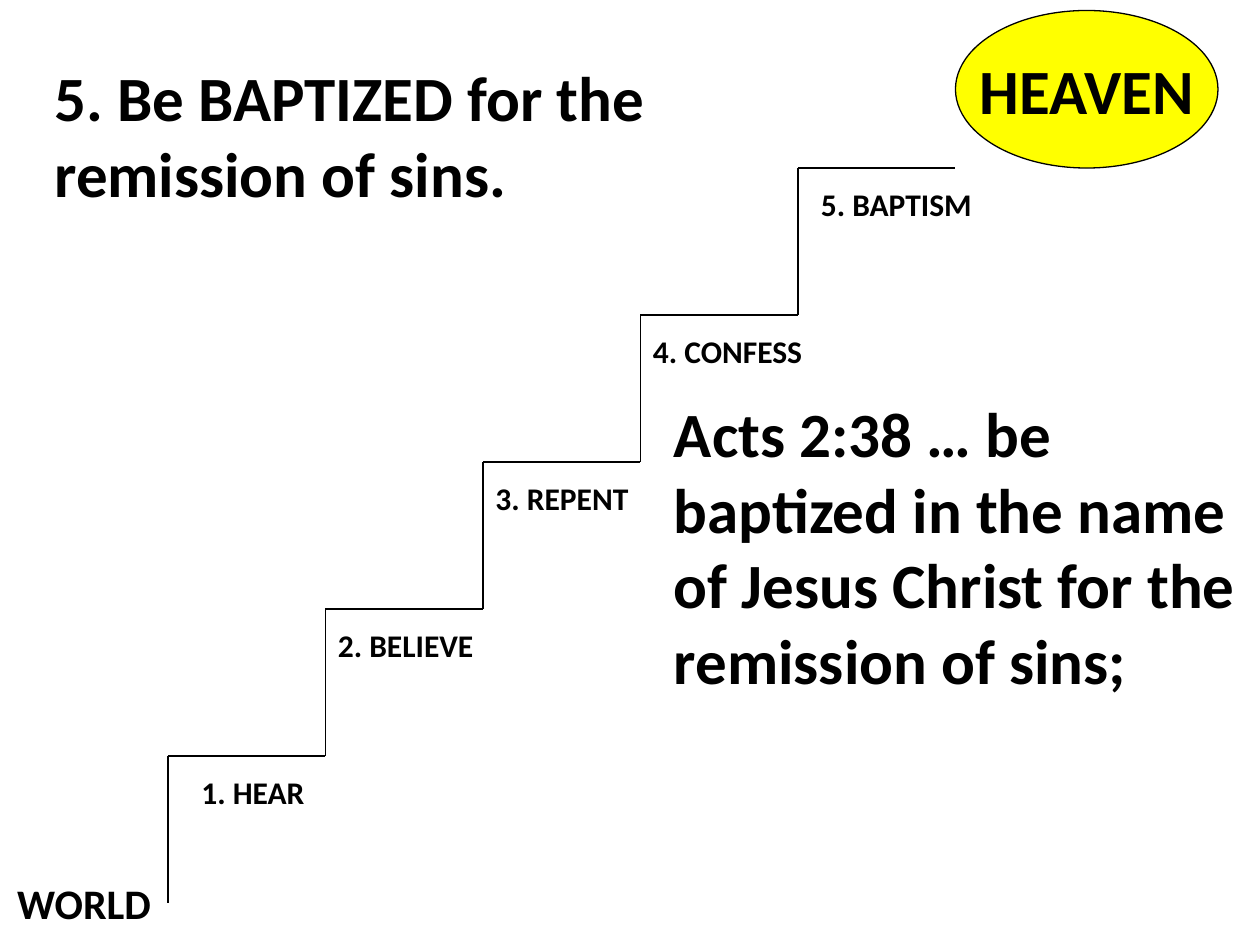
from dataclasses import dataclass
from lxml import etree
from pptx import Presentation
from pptx.dml.color import RGBColor as RGB
from pptx.enum.shapes import MSO_CONNECTOR as Link, MSO_SHAPE as Shape
from pptx.enum.text import MSO_ANCHOR as Anchor, PP_ALIGN as Align
from pptx.oxml.ns import qn
from pptx.util import Pt


@dataclass(frozen=True)
class Theme:
    ink: RGB = RGB(0, 0, 0)
    sun: RGB = RGB(255, 255, 0)
    font: str = "Calibri"
    small: int = 18
    mid: int = 24
    big: int = 36
    line: float = 0.75


theme = Theme()
deck = Presentation()
deck.slide_width, deck.slide_height = Pt(720), Pt(540)
slide = deck.slides.add_slide(deck.slide_layouts[6])
shapes = slide.shapes


def write(shape, text, size, align=Align.LEFT, wrap=True):
    frame = shape.text_frame
    frame.word_wrap = wrap
    frame.text = text
    para = frame.paragraphs[0]
    para.alignment = align
    font = para.runs[0].font
    font.name, font.size, font.bold = theme.font, Pt(size), True
    font.color.rgb = theme.ink


# Stairs: each step is a riser, then a tread
run, rise = 90, 84
steps = [
    ("1. HEAR", 108, 108),
    ("2. BELIEVE", 186, 132),
    ("3. REPENT", 276, 126),
    ("4. CONFESS", 366, 132),
    ("5. BAPTISM", 462, 132),
]
stairs = shapes.add_group_shape()
x, y = 96, 516
for label, left, width in steps:
    top = y - rise
    for ends in ((x, y, x, top), (x, top, x + run, top)):
        edge = stairs.shapes.add_connector(Link.STRAIGHT, *map(Pt, ends))
        edge.line.color.rgb = theme.ink
        edge.line.width = Pt(theme.line)
        etree.SubElement(edge._element.spPr, qn("a:effectLst"))
    box = shapes.add_textbox(Pt(left), Pt(top + 6), Pt(width), Pt(29))
    write(box, label, theme.small)
    x, y = x + run, top

# Start of the climb, heading and verse
notes = [
    ("WORLD", (0, 498, 96, 36), theme.mid, Align.CENTER),
    ("5. Be BAPTIZED for the remission of sins.",
     (24, 30, 354, 94), theme.big, Align.LEFT),
    ("Acts 2:38 … be baptized in the name of Jesus Christ for the "
     "remission of sins;", (378, 222, 342, 181), theme.big, Align.LEFT),
]
for text, place, size, align in notes:
    write(shapes.add_textbox(*map(Pt, place)), text, size, align)

# Goal at the top
goal = shapes.add_shape(Shape.OVAL, Pt(546), Pt(6), Pt(150), Pt(90))
goal.shadow.inherit = False
goal.fill.solid()
goal.fill.fore_color.rgb = theme.sun
goal.line.color.rgb = theme.ink
goal.line.width = Pt(theme.line)
goal.text_frame.vertical_anchor = Anchor.MIDDLE
write(goal, "HEAVEN", theme.big, Align.CENTER, wrap=False)

deck.save("out.pptx")
